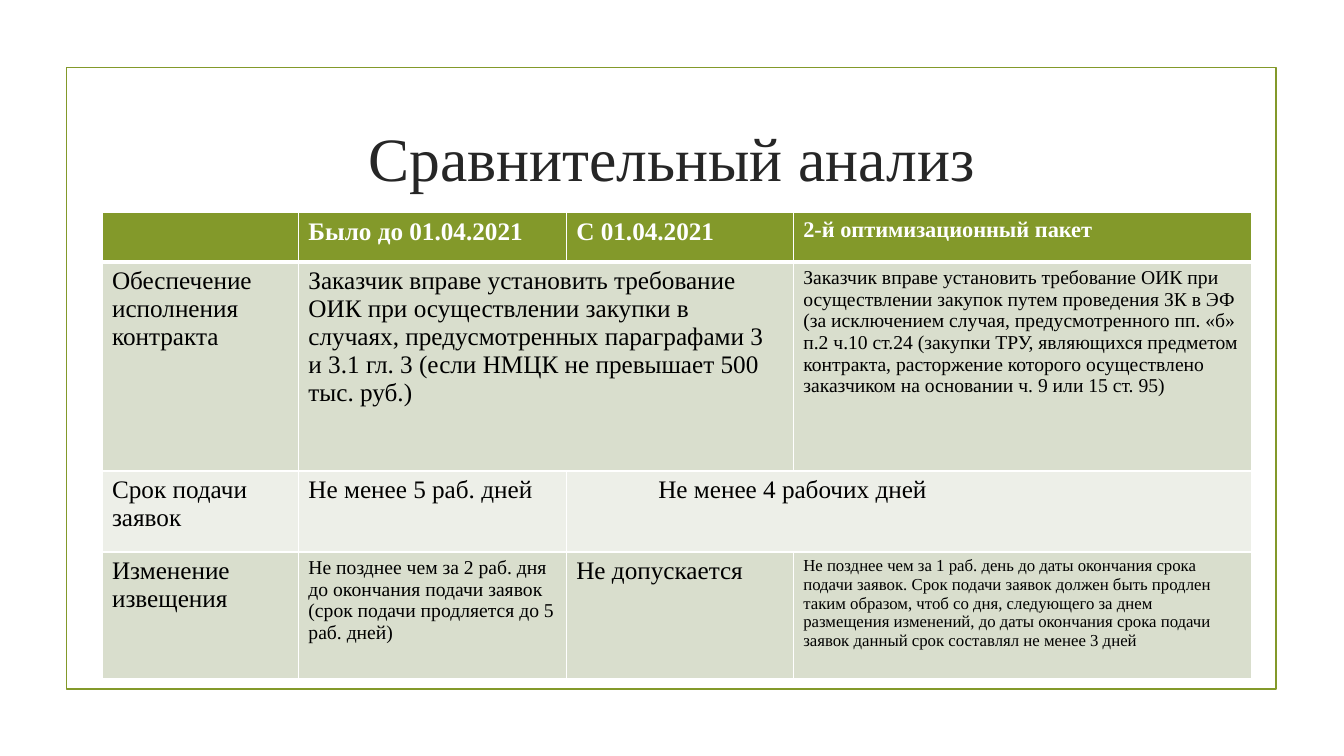
from lxml.etree import SubElement
from pptx import Presentation
from pptx.dml.color import RGBColor
from pptx.enum.shapes import MSO_SHAPE as Shape
from pptx.enum.text import MSO_ANCHOR as Anchor, PP_ALIGN as Align
from pptx.oxml.ns import qn
from pptx.util import Cm, Pt

FONT = "Times New Roman"
COLORS = {
    "green": "83992A",
    "band": "D9DECD",
    "pale": "EDEFE8",
    "title": "262626",
    "text": "000000",
    "white": "FFFFFF",
}
COLUMN_WIDTHS = [4.95, 6.75, 5.72, 11.56]
ROW_HEIGHTS = [1.24, 5.27, 2.04, 3.18]
ROW_FILLS = ["green", "band", "pale", "band"]

# Each cell is (text, size); None is covered by the merged cell to its left
ROWS = [
    [
        ("", 18),
        ("Было до 01.04.2021", 18),
        ("С 01.04.2021", 18),
        ("2-й оптимизационный пакет", 16),
    ],
    [
        ("Обеспечение исполнения контракта", 18),
        ("Заказчик вправе установить требование ОИК при осуществлении закупки "
         "в случаях, предусмотренных параграфами 3 и 3.1 гл. 3 "
         "(если НМЦК не превышает 500 тыс. руб.)", 18),
        None,
        ("Заказчик вправе установить требование ОИК при осуществлении закупок "
         "путем проведения ЗК в ЭФ (за исключением случая, предусмотренного "
         "пп. «б» п.2 ч.10 ст.24 (закупки ТРУ, являющихся предметом контракта, "
         "расторжение которого осуществлено заказчиком на основании "
         "ч. 9 или 15 ст. 95)", 14),
    ],
    [
        ("Срок подачи заявок", 18),
        ("Не менее 5 раб. дней", 18),
        ("Не менее 4 рабочих дней", 18),
        None,
    ],
    [
        ("Изменение извещения", 18),
        ("Не позднее чем за 2 раб. дня до окончания подачи заявок "
         "(срок подачи продляется до 5 раб. дней)", 14),
        ("Не допускается", 18),
        ("Не позднее чем за 1 раб. день до даты окончания срока подачи заявок. "
         "Срок подачи заявок должен быть продлен таким образом, чтоб со дня, "
         "следующего за днем размещения изменений, до даты окончания срока "
         "подачи заявок данный срок составлял не менее 3 дней", 12),
    ],
]


def color(name):
    return RGBColor.from_string(COLORS[name])


def format_font(paragraph, size, color_name, bold=False):
    font = paragraph.font
    font.name, font.size, font.bold = FONT, Pt(size), bold
    font.color.rgb = color(color_name)


def add_frame(slide):
    frame = slide.shapes.add_shape(
        Shape.RECTANGLE, Cm(1.68), Cm(1.7), Cm(30.48), Cm(15.67))
    frame.shadow.inherit = False
    frame.fill.background()
    frame.line.color.rgb = color("green")
    frame.line.width = Pt(1.25)


def set_title(slide, text):
    title = slide.shapes.title
    title.left, title.top = Cm(3.6), Cm(2.72)
    title.width, title.height = Cm(26.67), Cm(2.44)
    title.text_frame.text = text
    title.text_frame.vertical_anchor = Anchor.MIDDLE
    paragraph = title.text_frame.paragraphs[0]
    paragraph.alignment = Align.CENTER
    format_font(paragraph, 44, "title")


def add_borders(cell, top, bottom):
    properties = cell._tc.get_or_add_tcPr()
    for side, width in (("L", 1), ("R", 1), ("T", top), ("B", bottom)):
        line = SubElement(properties, qn(f"a:ln{side}"), w=str(Pt(width)))
        fill = SubElement(line, qn("a:solidFill"))
        SubElement(fill, qn("a:srgbClr"), val=COLORS["white"])


def fill_cell(cell, content, row_index):
    is_header = row_index == 0
    add_borders(cell, top=3 if row_index == 1 else 1, bottom=3 if is_header else 1)
    cell.fill.solid()
    cell.fill.fore_color.rgb = color(ROW_FILLS[row_index])
    if content:
        text, size = content
        cell.text = text
        format_font(cell.text_frame.paragraphs[0], size,
                    "white" if is_header else "text", bold=is_header)


def add_comparison_table(slide):
    table = slide.shapes.add_table(
        len(ROWS), len(COLUMN_WIDTHS), Cm(2.57), Cm(5.36),
        Cm(sum(COLUMN_WIDTHS)), Cm(sum(ROW_HEIGHTS))).table
    for column, width in zip(table.columns, COLUMN_WIDTHS):
        column.width = Cm(width)
    for row, height in zip(table.rows, ROW_HEIGHTS):
        row.height = Cm(height)

    for row_index, contents in enumerate(ROWS):
        for column_index, content in enumerate(contents):
            cell = table.cell(row_index, column_index)
            fill_cell(cell, content, row_index)
            if content is None:
                table.cell(row_index, column_index - 1).merge(cell)

    # The shared deadline is set in from the left edge of its merged cell
    table.cell(2, 2).margin_left = Cm(2.32)


def main():
    presentation = Presentation()
    presentation.slide_width, presentation.slide_height = Cm(33.87), Cm(19.05)
    slide = presentation.slides.add_slide(presentation.slide_layouts[5])
    add_frame(slide)
    set_title(slide, "Сравнительный анализ")
    add_comparison_table(slide)
    presentation.save("out.pptx")


if __name__ == "__main__":
    main()
